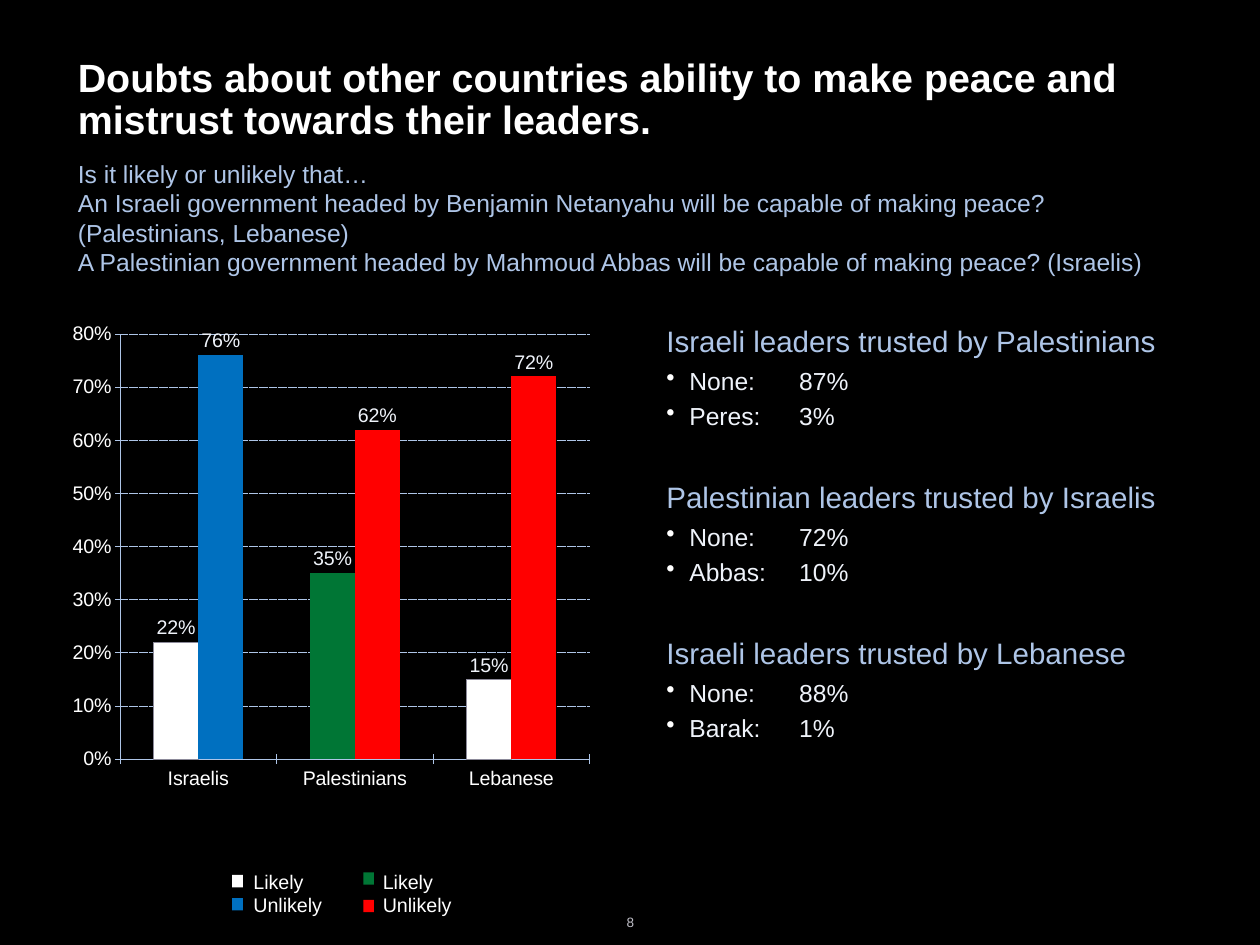
"""Build a slide on peace expectations and trust in neighbouring leaders."""
import pptx
import pptx.chart.data
import pptx.dml.color
import pptx.enum.chart
import pptx.enum.dml
import pptx.enum.shapes
import pptx.enum.text
import pptx.util
from lxml import etree
from pptx.oxml.ns import qn

Inches, Pt = pptx.util.Inches, pptx.util.Pt

COLOURS = {
    "black": "000000", "white": "FFFFFF", "pale": "EFF3FA", "sky": "AEC5E7",
    "blue": "0070C0", "green": "007635", "red": "FF0000",
    "edge": "8C8A9A", "grey": "BFBEC7",
}
TITLE = "Doubts about other countries ability to make peace and mistrust towards their leaders."
QUESTION = [
    "Is it likely or unlikely that…",
    "An Israeli government headed by Benjamin Netanyahu will be capable of making peace? (Palestinians, Lebanese)",
    "A Palestinian government headed by Mahmoud Abbas will be capable of making peace? (Israelis)",
]
TRUST = [
    ("Israeli leaders trusted by Palestinians", [("None", "87%"), ("Peres", "3%")]),
    ("Palestinian leaders trusted by Israelis", [("None", "72%"), ("Abbas", "10%")]),
    ("Israeli leaders trusted by Lebanese", [("None", "88%"), ("Barak", "1%")]),
]
COUNTRIES = ["Israelis", "Palestinians", "Lebanese"]
ANSWERS = [
    ("Likely", [0.22, 0.35, 0.15], ["white", "green", "white"]),
    ("Unlikely", [0.76, 0.62, 0.72], ["blue", "red", "red"]),
]
PLOT = {"x": 0.086, "y": 0.019, "w": 0.893, "h": 0.757}
LEGEND = [
    (2.62, 2.86, [("white", 9.88), ("blue", 10.14)]),
    (4.10, 4.32, [("green", 9.85), ("red", 10.16)]),
]
PAGE_NUMBER = "8"


def rgb(name):
    return pptx.dml.color.RGBColor.from_string(COLOURS[name])


def set_font(font, size, colour, bold=False):
    font.name, font.size, font.bold = "Arial", Pt(size), bold
    font.color.rgb = rgb(colour)


def set_line(line, colour, width):
    line.color.rgb = rgb(colour)
    line.width = Pt(width)


def add_box(page, left, top, width, height, inset=True):
    frame = page.shapes.add_textbox(*map(Inches, (left, top, width, height))).text_frame
    frame.word_wrap = True
    if not inset:
        frame.margin_left = frame.margin_right = frame.margin_top = frame.margin_bottom = 0
    return frame


def add_para(frame, text, size, colour, bold=False, bullet=False):
    para = frame.paragraphs[0]
    if para.runs:
        para = frame.add_paragraph()
    para.add_run().text = text
    if bullet:
        props = para._p.get_or_add_pPr()
        props.set("marL", str(Inches(0.26)))
        props.set("indent", str(-Inches(0.26)))
        tint = etree.SubElement(props, qn("a:buClr"))
        etree.SubElement(tint, qn("a:srgbClr"), val=COLOURS["white"])
        etree.SubElement(props, qn("a:buChar"), char="•")
    set_font(para.font, size, colour, bold)
    return para


def add_trust(page):
    frame = add_box(page, 7.52, 3.65, 5.95, 6.44, inset=False)
    for number, (heading, leaders) in enumerate(TRUST):
        para = add_para(frame, heading, 24, "sky")
        para.space_before = Pt(36.9 if number else 0)
        para.space_after = Pt(3.1)
        for leader, share in leaders:
            para = add_para(frame, f"{leader}: \t{share}", 20, "pale", bullet=True)
            para.space_before = para.space_after = Pt(2.5)


def style_axes(chart):
    kinds = pptx.enum.chart
    for axis, width in ((chart.category_axis, 0.38), (chart.value_axis, 0.22)):
        set_font(axis.tick_labels.font, 16, "white")
        axis.major_tick_mark = kinds.XL_TICK_MARK.CROSS
        axis.minor_tick_mark = kinds.XL_TICK_MARK.NONE
        set_line(axis.format.line, "sky", width)
    chart.category_axis.tick_label_position = kinds.XL_TICK_LABEL_POSITION.LOW
    values = chart.value_axis
    values.minimum_scale, values.maximum_scale, values.major_unit = 0, 0.8, 0.1
    values.tick_labels.number_format = "0%"
    values.tick_labels.number_format_is_linked = False
    values.has_major_gridlines = True
    grid = values.major_gridlines.format.line
    set_line(grid, "sky", 0.22)
    grid.dash_style = pptx.enum.dml.MSO_LINE.SQUARE_DOT


def style_series(series, fills):
    for index, fill in enumerate(fills):
        bar = series.points[index].format
        bar.fill.solid()
        bar.fill.fore_color.rgb = rgb(fill)
        if fill == "white":
            set_line(bar.line, "edge", 0.25)
        else:
            bar.line.fill.background()
    labels = series.data_labels
    labels.show_value = True
    labels.number_format, labels.number_format_is_linked = "0%", False
    labels.position = pptx.enum.chart.XL_LABEL_POSITION.OUTSIDE_END
    set_font(labels.font, 16, "pale")


def place_plot(chart):
    area = chart._chartSpace.chart.plotArea
    for old in area.findall(qn("c:layout")):
        area.remove(old)
    layout = etree.Element(qn("c:layout"))
    area.insert(0, layout)
    manual = etree.SubElement(layout, qn("c:manualLayout"))
    settings = {"layoutTarget": "inner", "xMode": "edge", "yMode": "edge", **PLOT}
    for tag, value in settings.items():
        etree.SubElement(manual, qn(f"c:{tag}"), val=str(value))


def add_answers(page):
    data = pptx.chart.data.CategoryChartData(number_format="0%")
    data.categories = COUNTRIES
    for name, shares, _ in ANSWERS:
        data.add_series(name, shares)
    area = map(Inches, (0.82, 3.65, 5.96, 6.34))
    kind = pptx.enum.chart.XL_CHART_TYPE.COLUMN_CLUSTERED
    chart = page.shapes.add_chart(kind, *area, data).chart
    chart.has_title = chart.has_legend = False
    set_font(chart.font, 16, "white")
    plot = chart.plots[0]
    plot.gap_width, plot.overlap, plot.vary_by_categories = 150, 0, False
    style_axes(chart)
    for series, (_, _, fills) in zip(plot.series, ANSWERS):
        style_series(series, fills)
    place_plot(chart)


def add_legend(page):
    square = pptx.enum.shapes.MSO_SHAPE.RECTANGLE
    for swatch_left, label_left, swatches in LEGEND:
        frame = add_box(page, label_left, 9.82, 1.1, 0.54, inset=False)
        for (colour, top), (name, _, _) in zip(swatches, ANSWERS):
            add_para(frame, name, 16, "white")
            swatch = page.shapes.add_shape(square, *map(Inches, (swatch_left, top, 0.12, 0.14)))
            swatch.shadow.inherit = False
            swatch.fill.solid()
            swatch.fill.fore_color.rgb = rgb(colour)
            swatch.line.fill.background()


def main():
    deck = pptx.Presentation()
    deck.slide_width, deck.slide_height = Inches(14.22), Inches(10.67)
    page = deck.slides.add_slide(deck.slide_layouts[6])
    page.background.fill.solid()
    page.background.fill.fore_color.rgb = rgb("black")

    title = add_para(add_box(page, 0.78, 0.61, 12.73, 1.1), TITLE, 32, "white", bold=True)
    title.line_spacing = 0.9
    question = add_box(page, 0.78, 1.74, 12.69, 1.5)
    for sentence in QUESTION:
        add_para(question, sentence, 20, "sky")
    add_answers(page)
    add_trust(page)
    add_legend(page)
    number = add_para(add_box(page, 6.92, 10.27, 0.39, 0.29), PAGE_NUMBER, 11, "grey")
    number.alignment = pptx.enum.text.PP_ALIGN.CENTER
    deck.save("out.pptx")


if __name__ == "__main__":
    main()
